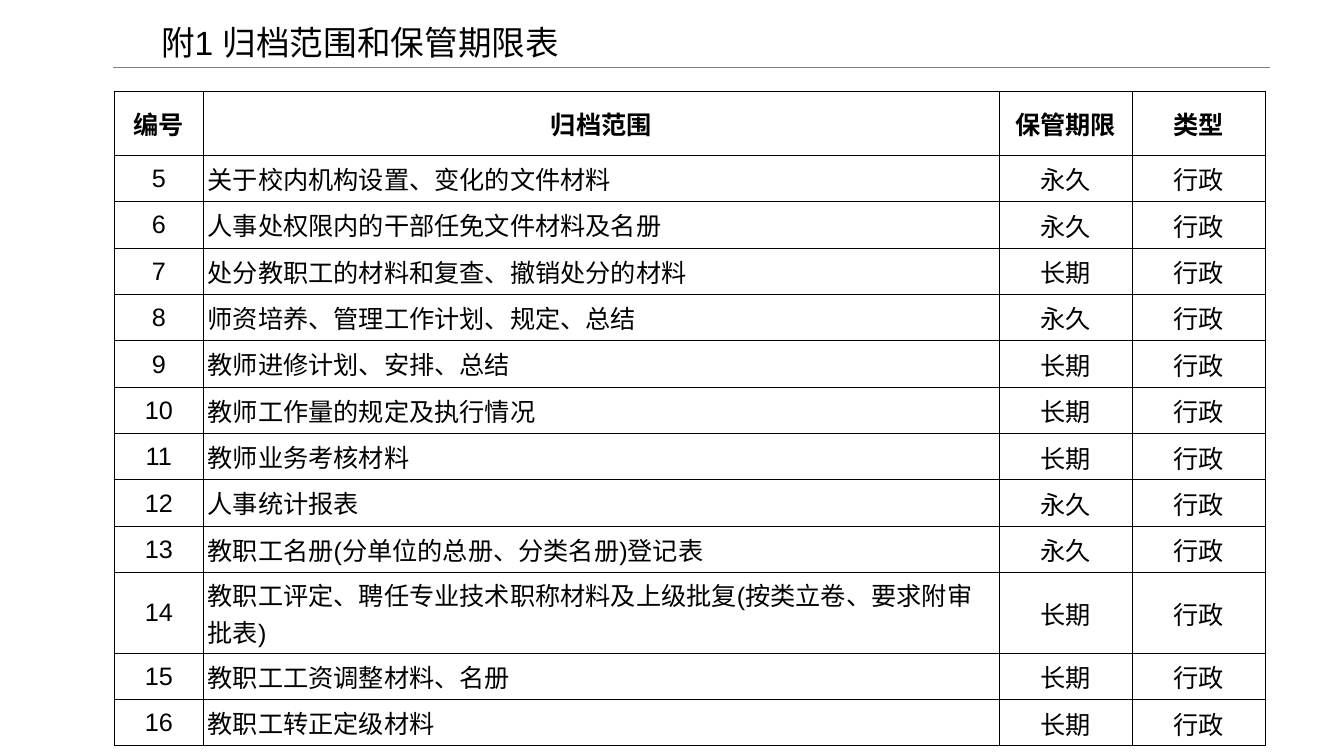
from dataclasses import dataclass

from lxml.etree import SubElement
from pptx import Presentation
from pptx.dml.color import RGBColor
from pptx.enum.shapes import MSO_CONNECTOR
from pptx.enum.text import MSO_ANCHOR, PP_ALIGN
from pptx.oxml import parse_xml
from pptx.oxml.ns import nsdecls, qn
from pptx.slide import Slide
from pptx.table import Table, _Cell
from pptx.text.text import _Paragraph
from pptx.util import Inches, Pt

BLACK = "000000"
GRAY = "808080"
FIRST_NUMBER = 5
RECORD_TYPE = "行政"
HEADINGS = ("编号", "归档范围", "保管期限", "类型")
COLUMN_WIDTHS = (0.89, 7.89, 1.32, 1.32)
HEADER_HEIGHT = 0.63
ROW_HEIGHT = 0.46
TWO_LINE_HEIGHT = 0.8


@dataclass(frozen=True)
class ArchiveItem:
    scope: str
    retention: str
    height: float = ROW_HEIGHT


@dataclass(frozen=True)
class CellStyle:
    align: PP_ALIGN
    insets: tuple[float, float, float, float]
    bold: bool = False


HEADER_STYLE = CellStyle(PP_ALIGN.CENTER, (0, 0, 0, 0), True)
CENTER_STYLE = CellStyle(PP_ALIGN.CENTER, (0.01, 0.01, 0.01, 0))
SCOPE_STYLE = CellStyle(PP_ALIGN.LEFT, (0.04, 0.04, 0.04, 0.04))
BODY_STYLES = (CENTER_STYLE, SCOPE_STYLE, CENTER_STYLE, CENTER_STYLE)

ITEMS = (
    ArchiveItem("关于校内机构设置、变化的文件材料", "永久"),
    ArchiveItem("人事处权限内的干部任免文件材料及名册", "永久"),
    ArchiveItem("处分教职工的材料和复查、撤销处分的材料", "长期"),
    ArchiveItem("师资培养、管理工作计划、规定、总结", "永久"),
    ArchiveItem("教师进修计划、安排、总结", "长期"),
    ArchiveItem("教师工作量的规定及执行情况", "长期"),
    ArchiveItem("教师业务考核材料", "长期"),
    ArchiveItem("人事统计报表", "永久"),
    ArchiveItem("教职工名册(分单位的总册、分类名册)登记表", "永久"),
    ArchiveItem(
        "教职工评定、聘任专业技术职称材料及上级批复(按类立卷、要求附审批表)",
        "长期",
        TWO_LINE_HEIGHT,
    ),
    ArchiveItem("教职工工资调整材料、名册", "长期"),
    ArchiveItem("教职工转正定级材料", "长期"),
)


def color(value: str) -> RGBColor:
    return RGBColor.from_string(value)


def write_text(para: _Paragraph, text: str, size: int, bold: bool = False) -> None:
    span = para.add_run()
    span.text = text
    for name, value in {"name": "Arial", "size": Pt(size), "bold": bold}.items():
        setattr(span.font, name, value)
    span.font.color.rgb = color(BLACK)


def add_title(page: Slide, text: str) -> None:
    box = page.shapes.add_textbox(Inches(1.5), Inches(0.14), Inches(11.06), Inches(0.6))
    box.text_frame.word_wrap = True
    box.text_frame.vertical_anchor = MSO_ANCHOR.MIDDLE
    para = box.text_frame.paragraphs[0]
    para.line_spacing = 0.9
    write_text(para, text, 24)


def add_rule(page: Slide) -> None:
    rule = page.shapes.add_connector(
        MSO_CONNECTOR.STRAIGHT, Inches(1.12), Inches(0.67), Inches(12.6), Inches(0.67)
    )
    rule.line.color.rgb = color(GRAY)
    rule.line.width = Pt(0.75)
    SubElement(rule._element.spPr, qn("a:effectLst"))


def add_borders(cell: _Cell) -> None:
    properties = cell._tc.get_or_add_tcPr()
    for position, side in enumerate(("lnL", "lnR", "lnT", "lnB")):
        border = parse_xml(
            f'<a:{side} {nsdecls("a")} w="{Pt(0.5)}"><a:solidFill>'
            f'<a:srgbClr val="{BLACK}"/></a:solidFill></a:{side}>'
        )
        properties.insert(position, border)


def fill_cell(cell: _Cell, text: str, style: CellStyle) -> None:
    left, top, right, bottom = style.insets
    margins = {
        "margin_left": left,
        "margin_top": top,
        "margin_right": right,
        "margin_bottom": bottom,
    }
    for name, value in margins.items():
        setattr(cell, name, Inches(value))
    cell.vertical_anchor = MSO_ANCHOR.MIDDLE
    cell.fill.background()
    add_borders(cell)
    para = cell.text_frame.paragraphs[0]
    para.alignment = style.align
    write_text(para, text, 18, style.bold)


def fill_row(
    table: Table, index: int, texts: tuple[str, ...], styles: tuple[CellStyle, ...]
) -> None:
    for cell, text, style in zip(table.rows[index].cells, texts, styles):
        fill_cell(cell, text, style)


def add_archive_table(page: Slide) -> None:
    heights = [HEADER_HEIGHT] + [item.height for item in ITEMS]
    table = page.shapes.add_table(
        len(heights), len(HEADINGS), Inches(1.13), Inches(0.91),
        Inches(sum(COLUMN_WIDTHS)), Inches(sum(heights)),
    ).table
    table.horz_banding = False
    table.first_row = False
    for column, width in zip(table.columns, COLUMN_WIDTHS):
        column.width = Inches(width)
    for row, height in zip(table.rows, heights):
        row.height = Inches(height)
    fill_row(table, 0, HEADINGS, (HEADER_STYLE,) * len(HEADINGS))
    for index, item in enumerate(ITEMS):
        texts = (str(FIRST_NUMBER + index), item.scope, item.retention, RECORD_TYPE)
        fill_row(table, index + 1, texts, BODY_STYLES)


def main() -> None:
    deck = Presentation()
    deck.slide_width = Inches(13.33)
    deck.slide_height = Inches(7.5)
    page = deck.slides.add_slide(deck.slide_layouts[6])
    add_rule(page)
    add_title(page, "附1 归档范围和保管期限表")
    add_archive_table(page)
    deck.save("out.pptx")


if __name__ == "__main__":
    main()
